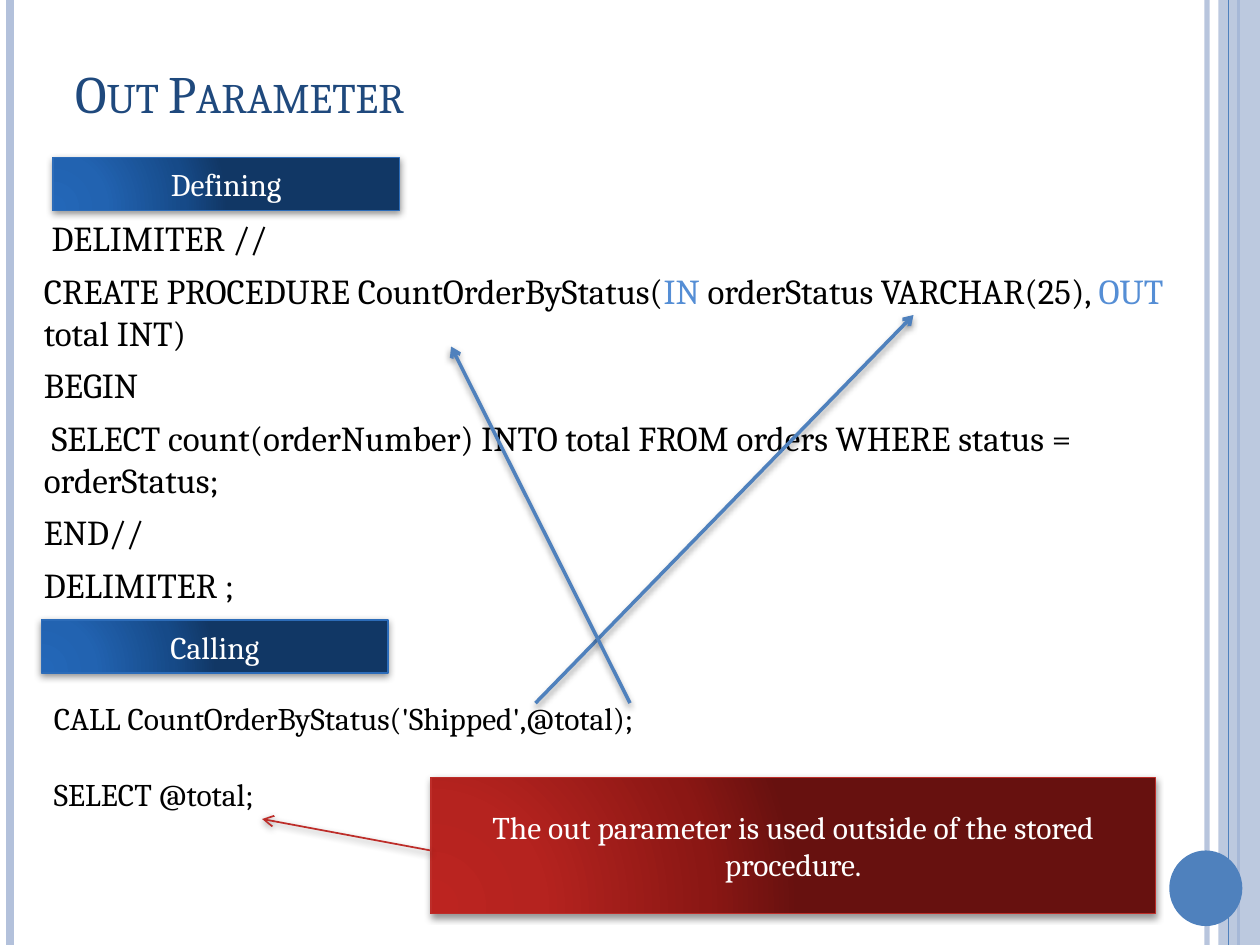
import pptx
import pptx.util
import pptx.dml.color
import pptx.enum.shapes
import pptx.enum.text
import pptx.oxml
import pptx.oxml.ns

Inches, Pt = pptx.util.Inches, pptx.util.Pt
RGB = pptx.dml.color.RGBColor.from_string
SHAPE = pptx.enum.shapes.MSO_SHAPE
ALIGN = pptx.enum.text.PP_ALIGN
ANCHOR = pptx.enum.text.MSO_ANCHOR
NS = pptx.oxml.ns.nsdecls("a")

COLORS = {
    "pale": "B3C1DB", "blue": "4F81BD", "title": "1F497D", "keyword": "558ED5",
    "black": "000000", "white": "FFFFFF", "blue_edge": "2C6CB9", "red_edge": "BD2D29",
}
BLUE_STOPS = {0: "2367B8", 30: "2263B1", 75: "164A88", 100: "113765"}
RED_STOPS = {0: "BC2420", 30: "B5231F", 75: "8B1714", 100: "67110F"}
# Shadow: opacity %, distance in points
BOX_SHADOW, ARROW_SHADOW = (42, 1.6), (40, 2)


class Deck:
    font = "Cambria"

    def __init__(self, prs):
        self.s = prs.slides.add_slide(prs.slide_layouts[6])

    def effects(self, sp, shadow=None):
        inner = ""
        if shadow:
            alpha, dist = shadow
            inner = (f'<a:outerShdw blurRad="{Pt(4)}" dist="{Pt(dist)}" dir="5400000" '
                     f'rotWithShape="0"><a:srgbClr val="{COLORS["black"]}">'
                     f'<a:alpha val="{alpha * 1000}"/></a:srgbClr></a:outerShdw>')
        sp._element.spPr.append(
            pptx.oxml.parse_xml(f"<a:effectLst {NS}>{inner}</a:effectLst>"))

    def alpha(self, sp, percent):
        clr = next(sp._element.spPr.iter(pptx.oxml.ns.qn("a:srgbClr")))
        clr.append(pptx.oxml.parse_xml(f'<a:alpha {NS} val="{percent * 1000}"/>'))

    def line(self, start, end, color, width, alpha=None, arrow=False, shadow=None):
        sp = self.s.shapes.add_connector(
            pptx.enum.shapes.MSO_CONNECTOR.STRAIGHT, *map(Inches, start + end))
        sp.line.color.rgb = RGB(COLORS[color])
        sp.line.width = Pt(width)
        if alpha:
            self.alpha(sp, alpha)
        if arrow:
            sp.line._get_or_add_ln().append(
                pptx.oxml.parse_xml(f'<a:tailEnd {NS} type="arrow"/>'))
        self.effects(sp, shadow)

    def shape(self, kind, box, color, alpha=None):
        sp = self.s.shapes.add_shape(kind, *map(Inches, box))
        sp.fill.solid()
        sp.fill.fore_color.rgb = RGB(COLORS[color])
        sp.line.fill.background()
        if alpha:
            self.alpha(sp, alpha)
        self.effects(sp)

    def banner(self, box, text, stops, edge):
        sp = self.s.shapes.add_shape(SHAPE.RECTANGLE, *map(Inches, box))
        gs = "".join(f'<a:gs pos="{pos * 1000}"><a:srgbClr val="{c}"/></a:gs>'
                     for pos, c in stops.items())
        sp._element.spPr.insert(2, pptx.oxml.parse_xml(
            f'<a:gradFill {NS} rotWithShape="1"><a:gsLst>{gs}</a:gsLst>'
            '<a:path path="circle"><a:fillToRect l="5000" t="100000" r="120000" '
            'b="10000"/></a:path></a:gradFill>'))
        sp.line.color.rgb = RGB(COLORS[edge])
        sp.line.width = Pt(1)
        self.effects(sp, BOX_SHADOW)
        self.fill_text(sp.text_frame, [[(text, "white")]], 18, ANCHOR.MIDDLE,
                       {"alignment": ALIGN.CENTER})

    def text(self, box, paragraphs, size, anchor=ANCHOR.TOP, para=None):
        tf = self.s.shapes.add_textbox(*map(Inches, box)).text_frame
        self.fill_text(tf, paragraphs, size, anchor, para or {})
        return tf

    def fill_text(self, tf, paragraphs, size, anchor, para):
        tf.word_wrap = True
        tf.vertical_anchor = anchor
        for i, runs in enumerate(paragraphs):
            p = tf.add_paragraph() if i else tf.paragraphs[0]
            for name, value in para.items():
                setattr(p, name, value)
            for text, color in runs:
                r = p.add_run()
                r.text = text
                for name, value in {"name": self.font, "size": Pt(size)}.items():
                    setattr(r.font, name, value)
                r.font.color.rgb = RGB(COLORS[color])


def main():
    prs = pptx.Presentation()
    prs.slide_width, prs.slide_height = Inches(10), Inches(7.5)
    deck = Deck(prs)

    # Side stripes and page dot
    def stripe(x, color, width, alpha=None):
        deck.line((x, 0), (x, 7.5), color, width, alpha)

    stripe(9.58, "pale", 3, 93)
    stripe(0.08, "pale", 4.5)
    stripe(9.83, "blue", 1.5)
    deck.shape(SHAPE.RECTANGLE, (9.67, 0, 0.33, 7.5), "pale", 87)
    stripe(9.75, "blue", 0.75)
    deck.shape(SHAPE.OVAL, (9.28, 6.75, 0.58, 0.6), "blue")

    # Title in small capitals
    title = deck.text((0.5, 0.3, 8.67, 0.87), [[("Out Parameter", "title")]],
                      30, ANCHOR.MIDDLE)
    title.paragraphs[0].runs[0].font._element.set("cap", "small")

    # Procedure definition
    deck.text((0.25, 1.67, 9.5, 3.5), [
        [(" DELIMITER //", "black")],
        [("CREATE PROCEDURE CountOrderByStatus(", "black"), ("IN ", "keyword"),
         ("orderStatus VARCHAR(25), ", "black"), ("OUT", "keyword"),
         (" total INT)", "black")],
        [("BEGIN", "black")],
        [(" SELECT count(orderNumber) INTO total FROM orders WHERE status = orderStatus;",
          "black")],
        [("END//", "black")],
        [("DELIMITER ;", "black")],
    ], 20, para={"space_before": Pt(6)})

    # Section banners
    for x, y, label in ((0.42, 1.25, "Defining"), (0.33, 4.92, "Calling")):
        deck.banner((x, y, 2.75, 0.42), label, BLUE_STOPS, "blue_edge")

    # Procedure call
    call = deck.text((0.33, 5.5, 7.17, 1.01), [
        [("CALL CountOrderByStatus('Shipped',@total);", "black")],
        [("SELECT @total;", "black")],
    ], 18)
    call.paragraphs[1].space_before = Pt(22)

    # Arrows from arguments to parameters
    for start, end in (((4.25, 5.58), (7.25, 2.5)), ((5, 5.58), (3.58, 2.75))):
        deck.line(start, end, "blue", 2, arrow=True, shadow=ARROW_SHADOW)

    # Callout on the out parameter
    deck.banner((3.42, 6.17, 5.75, 1.08),
                "The out parameter is used outside of the stored procedure.",
                RED_STOPS, "red_edge")
    deck.line((3.42, 6.75), (2.08, 6.5), "red_edge", 1, arrow=True, shadow=BOX_SHADOW)

    prs.save("out.pptx")


if __name__ == "__main__":
    main()
